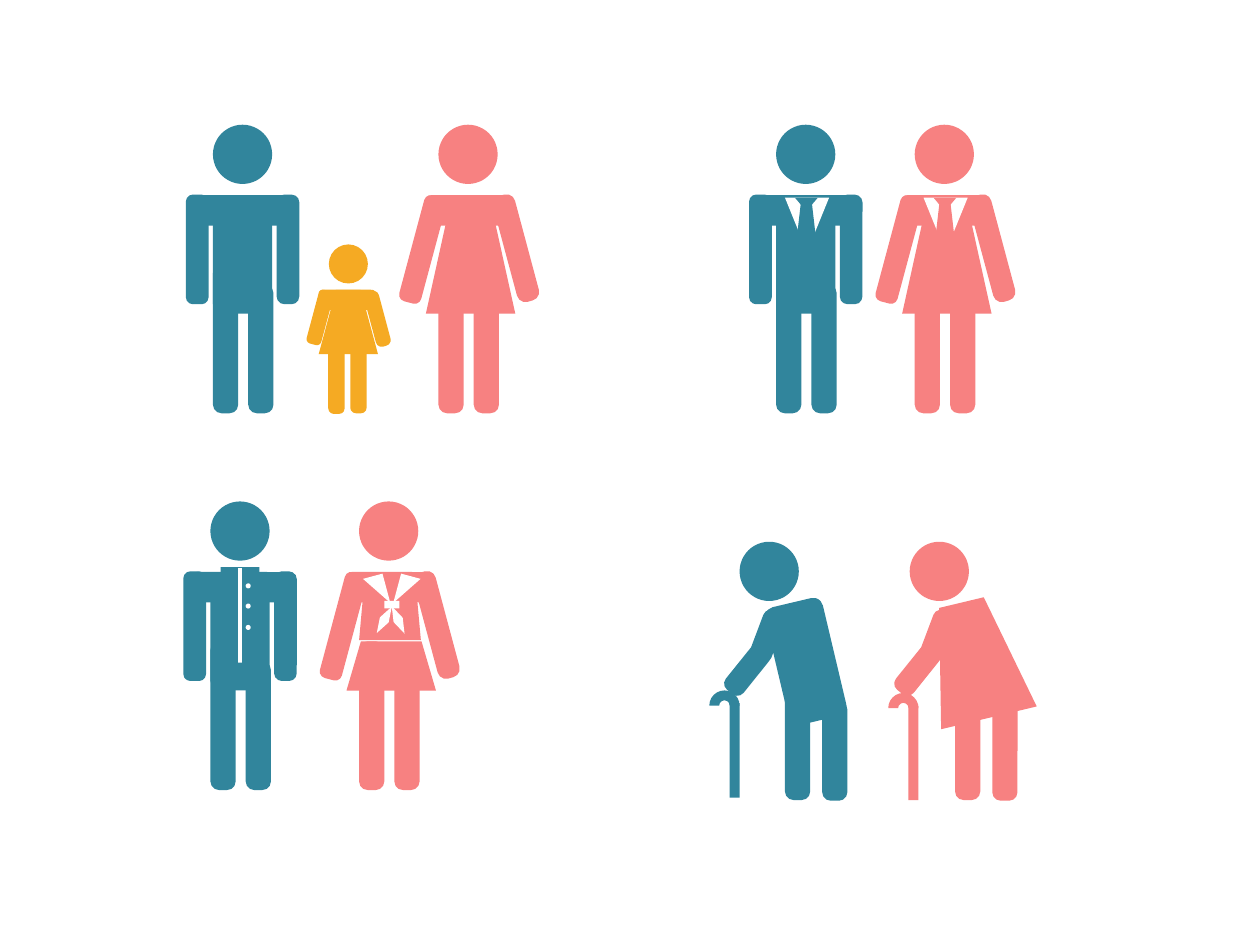
from collections import namedtuple

from pptx import Presentation, util as u
from pptx.dml.color import RGBColor
from pptx.enum.shapes import MSO_SHAPE as kinds

BLUE, PINK, YELLOW, WHITE = "31859C", "F78181", "F5AA23", "FFFFFF"

# Positions and sizes count grid cells; a figure's parts start from its head.
Part = namedtuple(
    "Part", "kind left top width height turn adjust colour flip",
    defaults=(0, (), None, False))

presentation = Presentation()
presentation.slide_width, presentation.slide_height = u.Inches(10), u.Inches(7.5)
slide = presentation.slides.add_slide(presentation.slide_layouts[6])
cell = presentation.slide_width // 1000


def paint(shape, colour):
    shape.fill.solid()
    shape.fill.fore_color.rgb = RGBColor.from_string(colour)
    shape.line.fill.background()
    shape.shadow.inherit = False


def limb(left, top, length, thickness, turn, roundness=0.338):
    return Part(kinds.ROUNDED_RECTANGLE, left, top, length, thickness,
                turn, (roundness,))


head = [Part(kinds.OVAL, 0, 0, 47, 47)]
legs = [limb(-13, 168, 102, 20, 90), limb(-49, 160, 118, 20, 90)]

man = head + [
    Part(kinds.ROUNDED_RECTANGLE, 0, 56, 47, 94),
    limb(-15, 56, 79, 24, 0, 0.177),
    limb(16, 90, 87, 18, 90, 0.343),
    limb(-56, 90, 87, 18, 90, 0.304),
] + legs

woman = head + [
    limb(-10, 56, 69, 24, 0, 0.177),
    limb(18, 89, 87, 18, 75, 0.386),
    limb(-56, 90, 87, 18, 105, 0.294),
] + legs

dress = [Part(kinds.TRAPEZOID, -10, 56, 71, 94, 0, (0.293,))]

girl = [
    Part(kinds.OVAL, 0, 0, 31, 31),
    limb(-8, 36, 45, 16, 0, 0.177),
    limb(16, 53, 45, 12, 75, 0.386),
    limb(-29, 52, 44, 12, 105, 0.294),
    limb(-2, 102, 51, 13, 90),
    limb(-25, 97, 62, 13, 90),
    Part(kinds.TRAPEZOID, -8, 36, 47, 51, 0, (0.293,)),
]

shirt_and_tie = [
    Part(kinds.ISOSCELES_TRIANGLE, 7, 58, 35, 43, colour=WHITE, flip=True),
    Part(kinds.TRAPEZOID, 15, 58, 18, 8, 0, (0.845,), flip=True),
    Part(kinds.TRAPEZOID, 15, 63, 18, 39),
]

buttoned_uniform = [
    Part(kinds.RECTANGLE, 8, 52, 31, 8),
    Part(kinds.RECTANGLE, 22, 53, 3, 75, colour=WHITE),
] + [Part(kinds.OVAL, 28, top, 4, 4, colour=WHITE) for top in (65, 81, 98)]

sailor_uniform = [
    Part(kinds.TRAPEZOID, -10, 111, 71, 39, 0, (0.293,)),
    Part(kinds.TRAPEZOID, 0, 71, 49, 39, 0, (0.09,)),
    Part(kinds.ISOSCELES_TRIANGLE, 30, 59, 16, 24, 15, (0,), WHITE, True),
    Part(kinds.ISOSCELES_TRIANGLE, 6, 59, 16, 24, 345, (1,), WHITE, True),
    Part(kinds.DIAMOND, 27, 82, 8, 24, 335, (), WHITE),
    Part(kinds.RECTANGLE, 20, 79, 12, 6, colour=WHITE),
    Part(kinds.DIAMOND, 16, 82, 8, 24, 29.6, (), WHITE),
]

elder = head + [
    limb(36, 156, 79, 20, 90),
    limb(-1, 148, 94, 20, 90),
    limb(1, 66, 42, 18, 110.7, 0.343),
    limb(-16, 93, 44, 18, 308.8, 0.343),
]
elder_coat = [Part(kinds.ROUNDED_RECTANGLE, 29, 47, 47, 96, 346.7)]
elder_dress = [Part(kinds.TRAPEZOID, 13, 47, 78, 94, 346.6, (0.267,))]

cane = [
    Part(kinds.BLOCK_ARC, -24, 118, 24, 24, 0, (108, 0, 0.327)),
    Part(kinds.RECTANGLE, -8, 128, 8, 75),
]
near_cane = [part._replace(left=part.left + 7, top=part.top + 2) for part in cane]

figures = [
    (169, 99, BLUE, man),
    (348, 99, PINK, woman + dress),
    (616, 99, BLUE, man + shirt_and_tie),
    (261, 194, YELLOW, girl),
    (726, 99, PINK, woman + dress + shirt_and_tie),
    (285, 398, PINK, woman + sailor_uniform),
    (167, 398, BLUE, man + buttoned_uniform),
    (587, 430, BLUE, elder + elder_coat + cane),
    (722, 430, PINK, elder + elder_dress + near_cane),
]

for column, row, colour, parts in figures:
    group = slide.shapes.add_group_shape()
    for part in parts:
        shape = group.shapes.add_shape(
            part.kind, (column + part.left) * cell, (row + part.top) * cell,
            part.width * cell, part.height * cell)
        shape.rotation = part.turn
        for index, value in enumerate(part.adjust):
            shape.adjustments[index] = value
        if part.flip:
            shape.element.spPr.xfrm.set("flipV", "1")
        paint(shape, part.colour or colour)

presentation.save("out.pptx")
